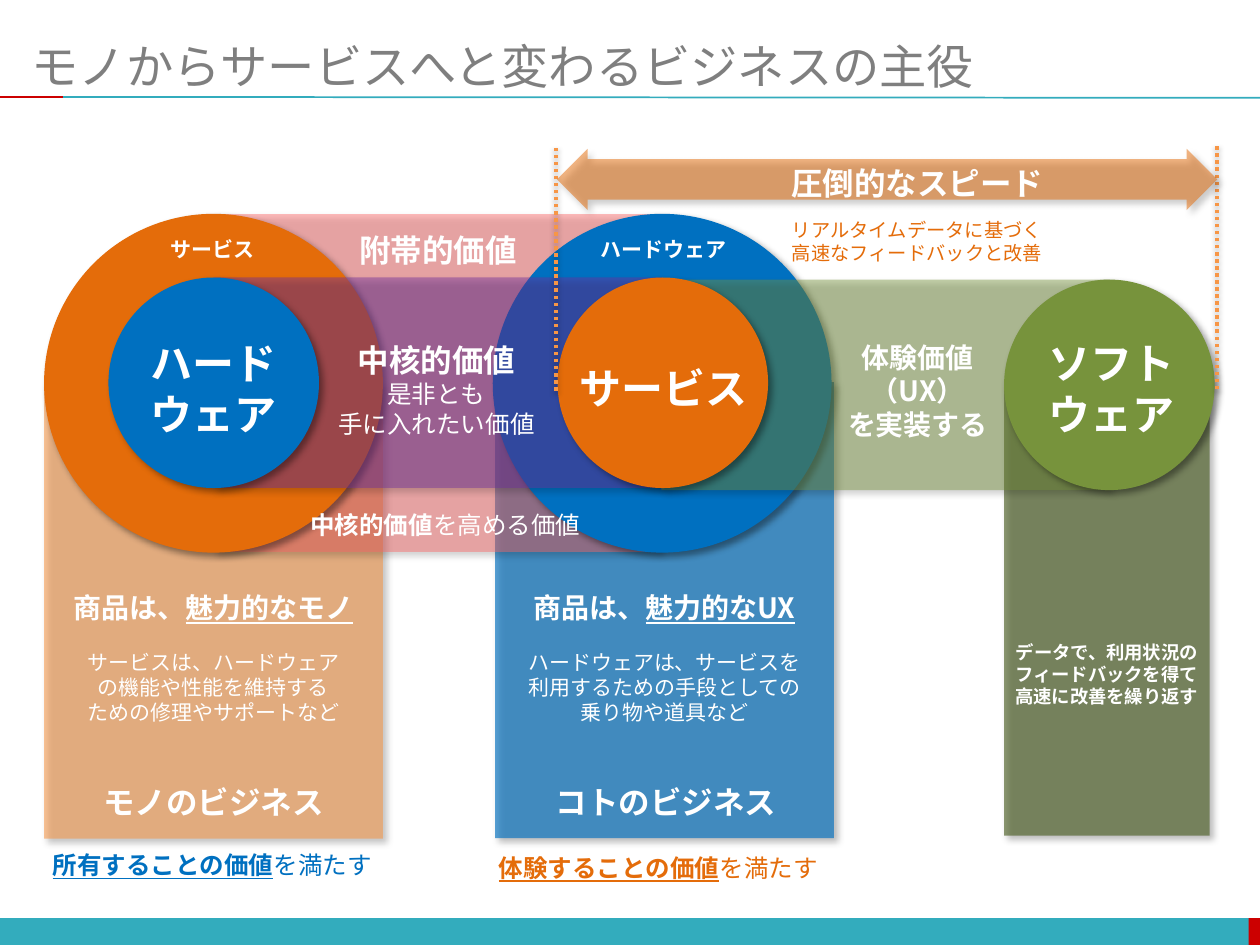
from dataclasses import dataclass
from typing import NamedTuple

import pptx
import pptx.dml.color
import pptx.enum.dml
import pptx.enum.shapes
import pptx.enum.text
import pptx.oxml
import pptx.oxml.ns
import pptx.util

Pt = pptx.util.Pt
qn = pptx.oxml.ns.qn
KIND = pptx.enum.shapes.MSO_SHAPE
FONT = "Noto Sans CJK JP"
HUES = {
    "white": "FFFFFF", "grey": "7F7F7F", "teal": "33ACBD", "red": "CC0000",
    "orange": "E46C0A", "amber": "F79646", "blue": "0070C0", "pink": "FF6666",
    "purple": "7030A0", "green": "77933C", "moss": "4F6228", "black": "000000",
}
RING, CORE = 193.6, 120.3  # circle diameters
WIDE, TALL = 193.6, 260.6  # column size


class Run(NamedTuple):
    text: str
    size: float
    bold: bool = True
    hue: str = "white"
    under: bool = False


class Line(NamedTuple):
    runs: list[Run]
    gap: float = 0


@dataclass
class Block:
    kind: int
    left: float
    top: float
    width: float
    height: float
    hue: str
    alpha: int = 100
    shade: bool = True


@dataclass
class Label:
    left: float
    top: float
    width: float
    height: float
    lines: list[Line]
    wrap: bool = False


@dataclass
class Rule:
    start: tuple[float, float]
    end: tuple[float, float]
    hue: str
    weight: float
    dotted: bool = False


def rgb(hue: str):
    return pptx.dml.color.RGBColor.from_string(HUES[hue])


def cast(effects, alpha: int, blur: float, dist: float, angle: int) -> None:
    """Add an outer shadow to an effect list."""
    effects.append(pptx.oxml.parse_xml(
        f'<a:outerShdw xmlns:a="{pptx.oxml.ns.nsuri("a")}" blurRad="{Pt(blur)}" '
        f'dist="{Pt(dist)}" dir="{angle * 60000}" algn="tl" rotWithShape="0">'
        f'<a:srgbClr val="{HUES["black"]}"><a:alpha val="{alpha * 1000}"/>'
        '</a:srgbClr></a:outerShdw>'))


def style(run, size: float, bold: bool, hue: str, under: bool = False) -> None:
    font = run.font
    font.name, font.size, font.bold = FONT, Pt(size), bold
    font.underline = under
    font.color.rgb = rgb(hue)
    east = pptx.oxml.parse_xml(
        f'<a:ea xmlns:a="{pptx.oxml.ns.nsuri("a")}" typeface="{FONT}"/>')
    run._r.rPr.find(qn("a:latin")).addnext(east)


def draw_block(slide, block: Block):
    box = (Pt(n) for n in (block.left, block.top, block.width, block.height))
    shape = slide.shapes.add_shape(block.kind, *box)
    shape.fill.solid()
    shape.fill.fore_color.rgb = rgb(block.hue)
    shape.line.fill.background()
    shape.shadow.inherit = False
    props = shape._element.spPr
    if block.alpha < 100:
        tint = props.find(qn("a:solidFill")).find(qn("a:srgbClr"))
        tint.append(pptx.oxml.parse_xml(
            f'<a:alpha xmlns:a="{pptx.oxml.ns.nsuri("a")}" val="{block.alpha * 1000}"/>'))
    if block.shade:
        cast(props.find(qn("a:effectLst")), 40, 4, 3, 45)
    return shape


def draw_label(slide, label: Label) -> None:
    box = (Pt(n) for n in (label.left, label.top, label.width, label.height))
    frame = slide.shapes.add_textbox(*box).text_frame
    frame.word_wrap = label.wrap
    frame.auto_size = pptx.enum.text.MSO_AUTO_SIZE.SHAPE_TO_FIT_TEXT
    for i, line in enumerate(label.lines):
        para = frame.add_paragraph() if i else frame.paragraphs[0]
        para.alignment = pptx.enum.text.PP_ALIGN.CENTER
        if line.gap:
            para.space_before = Pt(line.gap)
        for part in line.runs:
            run = para.add_run()
            run.text = part.text
            style(run, part.size, part.bold, part.hue, part.under)


def draw_rule(slide, rule: Rule) -> None:
    ends = (Pt(n) for n in (*rule.start, *rule.end))
    link = slide.shapes.add_connector(pptx.enum.shapes.MSO_CONNECTOR.STRAIGHT, *ends)
    link.line.color.rgb = rgb(rule.hue)
    link.line.width = Pt(rule.weight)
    effects = pptx.oxml.parse_xml(f'<a:effectLst xmlns:a="{pptx.oxml.ns.nsuri("a")}"/>')
    if rule.dotted:
        link.line.dash_style = pptx.enum.dml.MSO_LINE.ROUND_DOT
        cast(effects, 38, 3.1, 1.6, 90)
    link._element.spPr.append(effects)


def rows(size: float, *texts: str, bold: bool = True, hue: str = "white",
         gap: float = 0) -> list[Line]:
    """Lines in one style, with the gap above the first."""
    return [Line([Run(t, size, bold, hue)], 0 if i else gap)
            for i, t in enumerate(texts)]


def pitch(left: float, width: float, goods: str, *notes: str) -> Label:
    head = Line([Run("商品は、", 16), Run(goods, 16, under=True)])
    return Label(left, 334, width, 85, [head, *rows(12, *notes, bold=False, gap=14.4)])


def need(left: float, top: float, value: str, hue: str) -> Label:
    return Label(left, top, 198, 24.5, [Line([
        Run(value, 14, hue=hue, under=True), Run("を満たす", 14, False, hue)])])


def disc(left: float, top: float, size: float, hue: str) -> Block:
    return Block(KIND.OVAL, left, top, size, size, hue)


def band(left: float, top: float, width: float, height: float, hue: str,
         alpha: int) -> Block:
    return Block(KIND.RECTANGLE, left, top, width, height, hue, alpha)


ITEMS = [
    Block(KIND.RECTANGLE, 0, 524.6, 720, 15.4, "teal", shade=False),
    Block(KIND.RECTANGLE, 713.5, 524.6, 6.5, 15.4, "red", shade=False),
    Rule((36, 55.4), (720, 55.9), "teal", 1),
    Rule((0, 55.4), (36, 55.4), "red", 1),
    band(25.2, 218.6, WIDE, TALL, "amber", 56),
    band(283, 218.4, WIDE, TALL, "blue", 65),
    band(122.4, 122.4, 254.9, 193, "pink", 44),
    disc(25.2, 122.2, RING, "orange"),
    disc(281.6, 122.2, RING, "blue"),
    band(122.4, 158.6, 256.3, CORE, "purple", 44),
    disc(62, 158.6, CORE, "blue"),
    Label(78.5, 189.4, 87.1, 65.5, rows(24, "ハード", "ウェア")),
    Label(181.4, 191.5, 136.1, 63.4, rows(18, "中核的価値")
          + rows(14, "是非とも", "手に入れたい価値", bold=False), True),
    Label(182.2, 128.2, 136.1, 28.8, rows(18, "附帯的価値"), True),
    Label(149, 288, 211, 24.5, [Line([
        Run("中核的価値", 14), Run("を高める価値", 14, False)])], True),
    Label(90, 131.8, 63.4, 21.6, rows(12, "サービス")),
    Label(335.5, 131.8, 87.1, 21.6, rows(12, "ハードウェア")),
    Label(25.2, 444.2, WIDE, 28.8, rows(18, "モノのビジネス"), True),
    Label(283.7, 444.2, WIDE, 28.8, rows(18, "コトのビジネス"), True),
    pitch(33.8, 176.4, "魅力的なモノ", "サービスは、ハードウェア",
          "の機能や性能を維持する", "ための修理やサポートなど"),
    pitch(293.8, 172, "魅力的なUX", "ハードウェアは、サービスを",
          "利用するための手段としての", "乗り物や道具など"),
    band(573.8, 216.9, 117.4, TALL, "moss", 65),
    band(378, 159.8, 256.3, CORE, "green", 44),
    disc(573.8, 159.8, CORE, "green"),
    Label(591.8, 189.4, 87.1, 65.5, rows(24, "ソフト", "ウェア")),
    Label(455, 190.8, 139, 65.5, rows(16, "体験価値", "（UX）", "を実装する"), True),
    Label(572.4, 362.9, 120.2, 45.4, rows(
        10.5, "データで、利用状況の", "フィードバックを得て", "高速に改善を繰り返す")),
    disc(318.6, 158.6, CORE, "orange"),
    Label(323.3, 203.8, 111.6, 36, rows(24, "サービス")),
    Rule((317.8, 223.2), (317.8, 83.8), "amber", 2, True),
    Rule((695.5, 222.5), (695.5, 83.1), "amber", 2, True),
    Block(KIND.LEFT_RIGHT_ARROW, 318.3, 85, 377.3, 35, "orange", 51),
    Label(444.2, 90, 159.8, 65.5, rows(18, "圧倒的なスピード") + rows(
        11, "リアルタイムデータに基づく", "高速なフィードバックと改善",
        bold=False, hue="orange", gap=9.6)),
    need(22.3, 482.4, "所有することの価値", "blue"),
    need(277.2, 483.8, "体験することの価値", "orange"),
]


def main() -> None:
    deck = pptx.Presentation()
    deck.slide_width, deck.slide_height = Pt(720), Pt(540)
    slide = deck.slides.add_slide(deck.slide_layouts[5])
    title = slide.shapes.title
    title.left, title.top, title.width, title.height = Pt(18), Pt(21), Pt(684), Pt(33)
    frame = title.text_frame
    frame.text = "モノからサービスへと変わるビジネスの主役"
    frame.margin_left = frame.margin_right = 0
    frame.vertical_anchor = pptx.enum.text.MSO_ANCHOR.MIDDLE
    frame.paragraphs[0].alignment = pptx.enum.text.PP_ALIGN.LEFT
    style(frame.paragraphs[0].runs[0], 27, False, "grey")
    for item in ITEMS:
        if isinstance(item, Block):
            shape = draw_block(slide, item)
            if item.kind == KIND.LEFT_RIGHT_ARROW:
                shape.adjustments[0], shape.adjustments[1] = 0.66, 0.5
        elif isinstance(item, Label):
            draw_label(slide, item)
        else:
            draw_rule(slide, item)
    deck.save("out.pptx")


if __name__ == "__main__":
    main()
